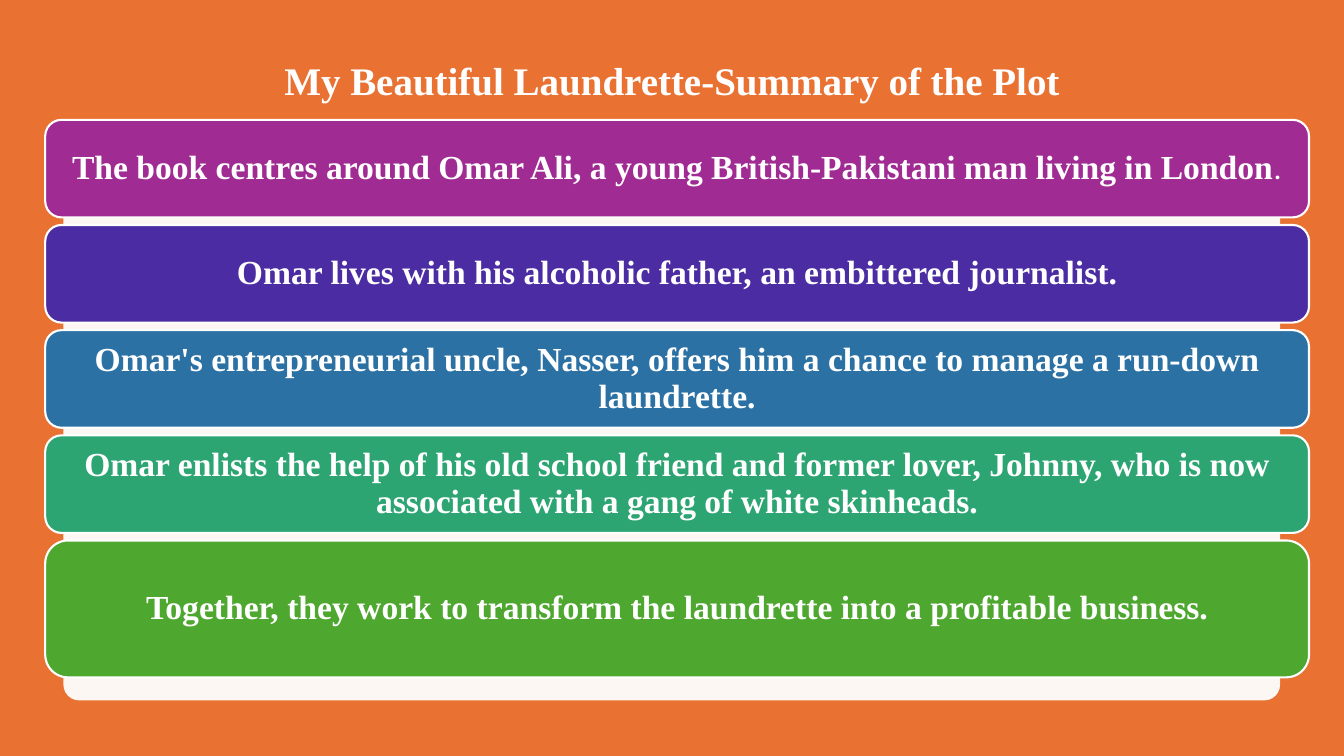
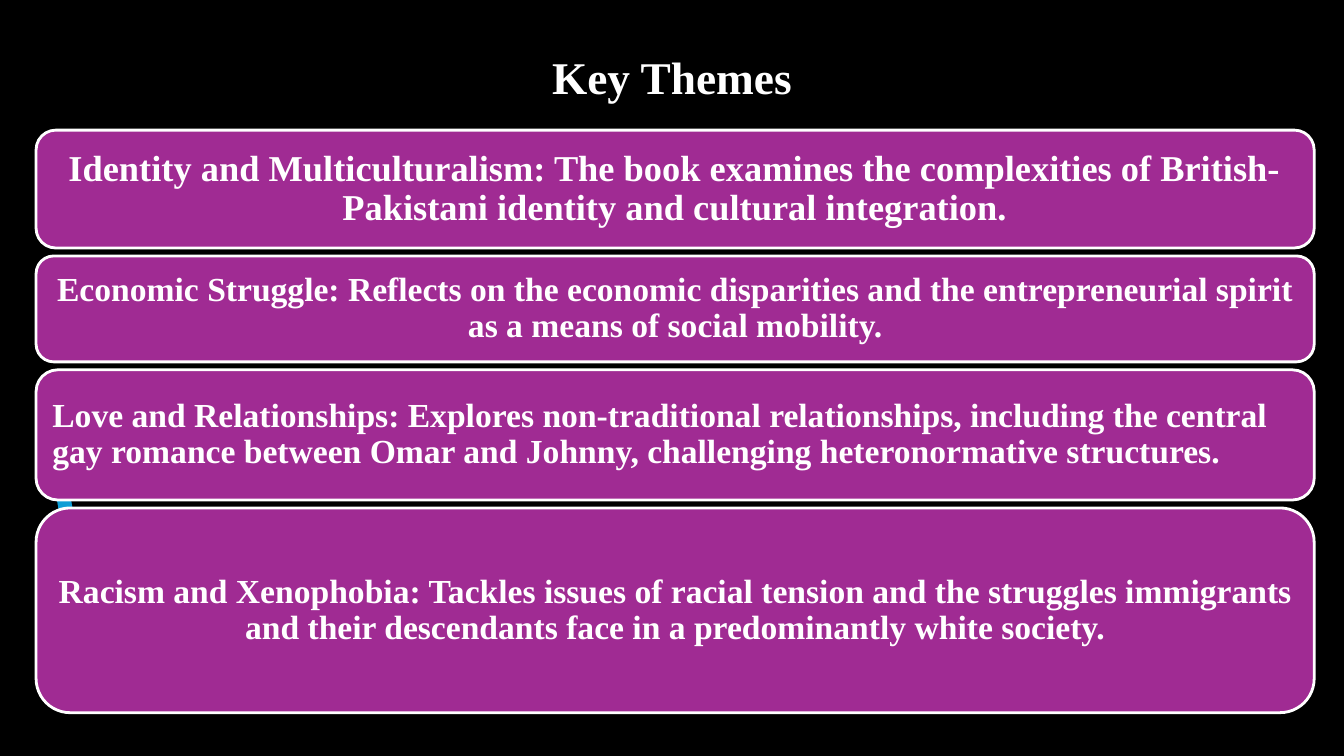
from lxml.etree import SubElement
from pptx import Presentation
from pptx.dml.color import RGBColor
from pptx.enum.dml import MSO_LINE
from pptx.enum.shapes import MSO_SHAPE
from pptx.enum.text import MSO_ANCHOR, PP_ALIGN
from pptx.oxml.ns import qn
from pptx.util import Cm, Pt

COLORS = {
    "white": "FFFFFF", "black": "000000", "orange": "E97132",
    "purple": "A02B93", "violet": "4B2CA2", "blue": "2C71A4",
    "teal": "2DA573", "green": "4EA72E", "sky": "0F9ED5",
}
FONT = "Times New Roman"
TITLE_LEFT, TITLE_WIDTH = 2.33, 29.21

# Text, colour, height in cm
PLOT = [
    ("The book centres around Omar Ali, a young British-Pakistani man living in London", "purple", 2.46),
    ("Omar lives with his alcoholic father, an embittered journalist.", "violet", 2.46),
    ("Omar's entrepreneurial uncle, Nasser, offers him a chance to manage a run-down laundrette.", "blue", 2.46),
    ("Omar enlists the help of his old school friend and former lover, Johnny, "
     "who is now associated with a gang of white skinheads.", "teal", 2.46),
    ("Together, they work to transform the laundrette into a profitable business.", "green", 3.45),
]
THEMES = [
    ("Identity and Multiculturalism: The book examines the complexities of "
     "British-Pakistani identity and cultural integration.", "purple", 2.97),
    ("Economic Struggle: Reflects on the economic disparities and the "
     "entrepreneurial spirit as a means of social mobility.", "purple", 2.67),
    ("Love and Relationships: Explores non-traditional relationships, including the central "
     "gay romance between Omar and Johnny, challenging heteronormative structures.", "purple", 3.28),
    ("Racism and Xenophobia: Tackles issues of racial tension and the struggles immigrants "
     "and their descendants face in a predominantly white society.", "purple", 5.16),
]


def rgb(name):
    return RGBColor.from_string(COLORS[name])


def format_paragraph(p, size):
    p.alignment = PP_ALIGN.CENTER
    p.line_spacing = 0.9
    p.font.name = FONT
    p.font.size = Pt(size)
    p.font.bold = True
    p.font.color.rgb = rgb("white")


def add_slide(prs, background, title, top, height, size):
    slide = prs.slides.add_slide(prs.slide_layouts[5])
    fill = slide.background.fill
    fill.solid()
    fill.fore_color.rgb = rgb(background)
    sp = slide.shapes.title
    sp.left, sp.top = Cm(TITLE_LEFT), Cm(top)
    sp.width, sp.height = Cm(TITLE_WIDTH), Cm(height)
    sp.text_frame.text = title
    sp.text_frame.vertical_anchor = MSO_ANCHOR.MIDDLE
    format_paragraph(sp.text_frame.paragraphs[0], size)
    return slide


def add_round_rect(slide, left, top, width, height, color):
    sp = slide.shapes.add_shape(
        MSO_SHAPE.ROUNDED_RECTANGLE, Cm(left), Cm(top), Cm(width), Cm(height))
    sp.shadow.inherit = False
    sp.fill.solid()
    sp.fill.fore_color.rgb = rgb(color)
    return sp


def add_panel(slide):
    """Slightly transparent white panel behind the bars."""
    sp = add_round_rect(slide, 1.6, 4.42, 30.66, 13.23, "white")
    sp.adjustments[0] = 0.03
    sp.line.fill.background()
    color = sp.element.spPr.find(qn("a:solidFill"))[0]
    SubElement(color, qn("a:alpha"), val="95000")


def add_arc(slide):
    """Dashed arc behind the bars."""
    sp = slide.shapes.add_shape(MSO_SHAPE.ARC, Cm(1.55), Cm(6.07), Cm(11.35), Cm(11.35))
    sp.shadow.inherit = False
    sp.rotation = 90
    sp.element.spPr.find(qn("a:xfrm")).set("flipV", "1")
    sp.fill.background()
    sp.line.color.rgb = rgb("sky")
    sp.line.width = Pt(10)
    sp.line.dash_style = MSO_LINE.DASH


def add_bars(slide, rows, left, top, width, gap, border):
    """Stack the bars downwards and return their first paragraphs."""
    paragraphs = []
    for text, color, height in rows:
        sp = add_round_rect(slide, left, top, width, height, color)
        sp.line.color.rgb = rgb("white")
        sp.line.width = Pt(border)
        tf = sp.text_frame
        tf.word_wrap = True
        tf.vertical_anchor = MSO_ANCHOR.MIDDLE
        tf.margin_left = tf.margin_right = tf.margin_top = tf.margin_bottom = Cm(0.25)
        tf.text = text
        p = tf.paragraphs[0]
        format_paragraph(p, 24)
        paragraphs.append(p)
        top += height + gap
    return paragraphs


def main():
    prs = Presentation()
    prs.slide_width, prs.slide_height = Cm(33.87), Cm(19.05)

    # Plot summary
    slide = add_slide(prs, "orange", "My Beautiful Laundrette-Summary of the Plot", 1.22, 1.75, 27.9)
    add_panel(slide)
    bars = add_bars(slide, PLOT, left=1.14, top=3.02, width=31.85, gap=0.19, border=1.5)
    r = bars[0].add_run()
    r.text = "."
    r.font.name = "Roboto"
    r.font.bold = False

    # Key themes
    slide = add_slide(prs, "black", "Key Themes", 0.94, 2.16, 32.4)
    add_arc(slide)
    bars = add_bars(slide, THEMES, left=0.91, top=3.28, width=32.21, gap=0.2, border=2)
    bars[0].font.size = Pt(26)
    bars[2].alignment = PP_ALIGN.LEFT

    prs.save("out.pptx")


if __name__ == "__main__":
    main()
